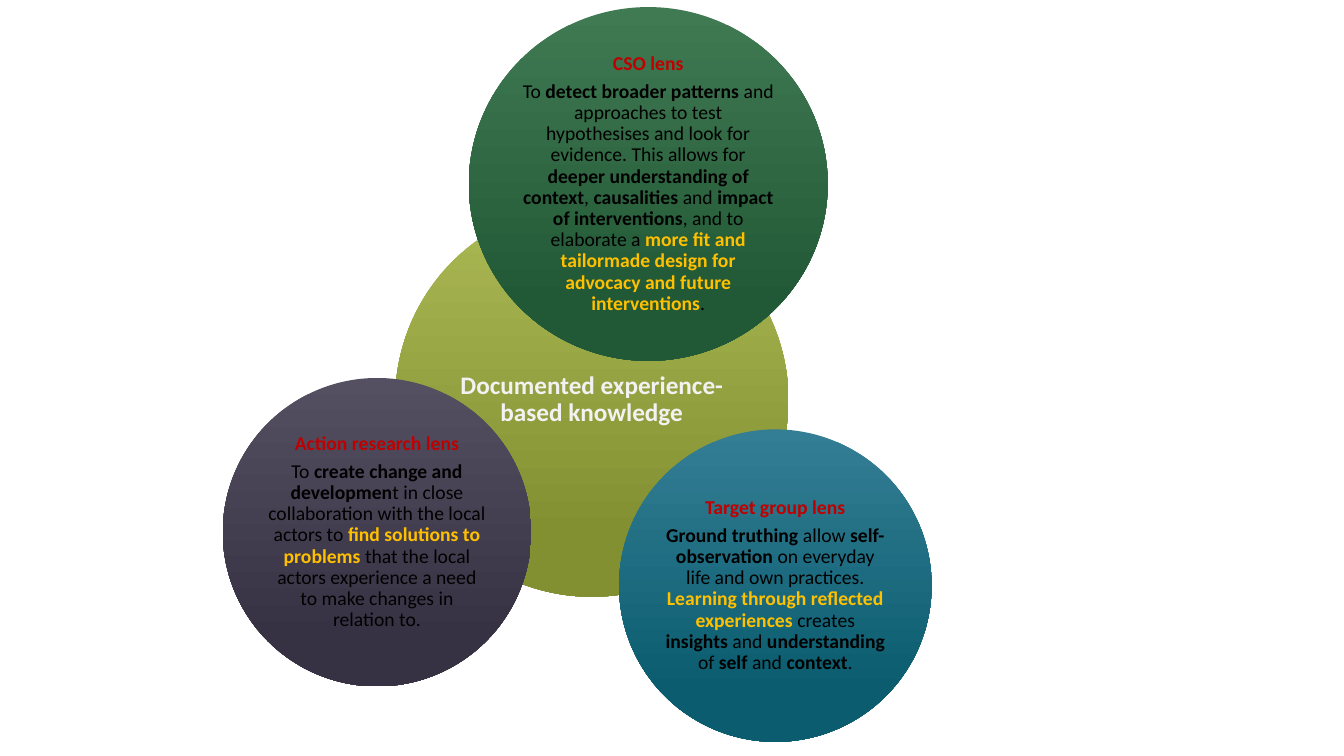
from pptx import Presentation
from pptx.dml.color import RGBColor
from pptx.enum.shapes import MSO_SHAPE
from pptx.enum.text import MSO_ANCHOR, PP_ALIGN
from pptx.util import Inches, Pt

BLACK = RGBColor(0x00, 0x00, 0x00)
GOLD = RGBColor(0xFF, 0xC0, 0x00)
RED = RGBColor(0xC0, 0x00, 0x00)
PALE = RGBColor(0xF2, 0xF2, 0xF2)
OLIVE = RGBColor(0xAB, 0xB9, 0x54), RGBColor(0x83, 0x90, 0x31)
PLUM = RGBColor(0x54, 0x50, 0x62), RGBColor(0x37, 0x32, 0x43)
GREEN = RGBColor(0x40, 0x7A, 0x53), RGBColor(0x21, 0x58, 0x36)
TEAL = RGBColor(0x34, 0x7E, 0x95), RGBColor(0x0A, 0x5C, 0x6E)

PLAIN = False, BLACK
STRONG = True, BLACK
GOAL = True, GOLD

action_research = [
    ("To ", PLAIN),
    ("create change and developmen", STRONG),
    ("t in close collaboration with the local actors to ", PLAIN),
    ("find solutions to problems ", GOAL),
    ("that the local actors experience a need to make changes in relation to.", PLAIN),
]
cso = [
    ("To ", PLAIN),
    ("detect broader patterns ", STRONG),
    ("and approaches to test hypothesises and look for evidence. This allows for ", PLAIN),
    ("deeper understanding of context", STRONG),
    (", ", PLAIN),
    ("causalities", STRONG),
    (" and", PLAIN),
    (" impact of interventions", STRONG),
    (", and to elaborate a ", PLAIN),
    ("more fit and tailormade design for advocacy and future interventions", GOAL),
    (".", PLAIN),
]
target_group = [
    ("Ground truthing ", STRONG),
    ("allow ", PLAIN),
    ("self-observation ", STRONG),
    ("on everyday life and own practices. ", PLAIN),
    ("Learning through reflected experiences ", GOAL),
    ("creates ", PLAIN),
    ("insights ", STRONG),
    ("and ", PLAIN),
    ("understanding ", STRONG),
    ("of ", PLAIN),
    ("self ", STRONG),
    ("and ", PLAIN),
    ("context", STRONG),
    (".", PLAIN),
]

circles = [
    (3.92, 2.02, 3.9, 3.9, OLIVE, 0.02, 18,
     [[("Documented experience-based knowledge", (True, PALE))]]),
    (2.21, 3.75, 3.06, 3.06, PLUM, 0, 14,
     [[("Action research lens", (True, RED))], action_research]),
    (4.65, 0.07, 3.56, 3.51, GREEN, 0, 14,
     [[("CSO lens", (True, RED))], cso]),
    (6.14, 4.26, 3.1, 3.1, TEAL, 0, 14,
     [[("Target group lens", (True, RED))], target_group]),
]

prs = Presentation()
prs.slide_width, prs.slide_height = Inches(13.33), Inches(7.5)
slide = prs.slides.add_slide(prs.slide_layouts[6])

for left, top, width, height, shades, inset, size, paragraphs in circles:
    lens = slide.shapes.add_shape(
        MSO_SHAPE.OVAL, Inches(left), Inches(top), Inches(width), Inches(height))
    lens.shadow.inherit = False
    lens.line.fill.background()
    lens.fill.gradient()
    lens.fill.gradient_angle = 270
    for stop, shade, position in zip(lens.fill.gradient_stops, shades, (0, 0.84)):
        stop.color.rgb = shade
        stop.position = position

    frame = lens.text_frame
    frame.word_wrap = True
    frame.vertical_anchor = MSO_ANCHOR.MIDDLE
    frame.margin_left = frame.margin_right = Inches(inset)
    frame.margin_top = frame.margin_bottom = Inches(inset)
    for number, runs in enumerate(paragraphs):
        paragraph = frame.add_paragraph() if number else frame.paragraphs[0]
        paragraph.alignment = PP_ALIGN.CENTER
        paragraph.line_spacing = 0.9
        paragraph.space_after = Pt(0.35 * size)
        paragraph.font.name = "Calibri"
        paragraph.font.size = Pt(size)
        for words, (bold, color) in runs:
            run = paragraph.add_run()
            run.text = words
            run.font.bold = bold
            run.font.color.rgb = color

prs.save("out.pptx")
